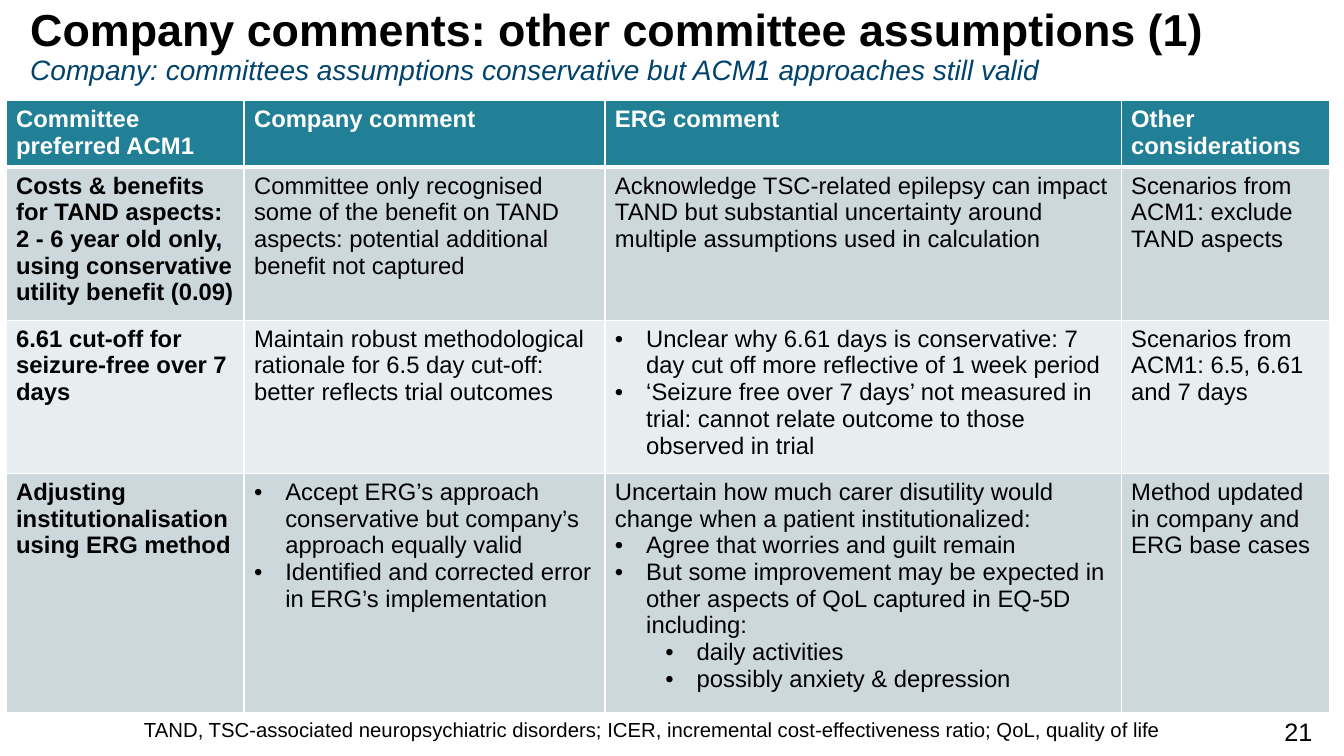
from dataclasses import dataclass

from lxml import etree
from pptx import Presentation
from pptx.dml.color import RGBColor
from pptx.enum.text import MSO_ANCHOR, MSO_AUTO_SIZE, PP_ALIGN
from pptx.oxml.ns import qn
from pptx.util import Inches, Pt

TOP, NO_FIT, LEFT = MSO_ANCHOR.TOP, MSO_AUTO_SIZE.NONE, PP_ALIGN.LEFT
TITLE_ONLY = 5


@dataclass(frozen=True)
class Theme:
    font: str = "Arial"
    black: str = "000000"
    white: str = "FFFFFF"
    subtitle: str = "00436C"
    header: str = "228096"
    bands: tuple[str, str] = ("CDD8DD", "E8EDEF")
    title_size: float = 32
    subtitle_size: float = 20
    table_size: float = 17
    footnote_size: float = 14.5
    number_size: float = 18


@dataclass(frozen=True)
class Line:
    text: str
    bullet: int = 0  # 0 is plain text, 1 and 2 are bullet levels


@dataclass(frozen=True)
class Assumption:
    preferred: str
    company: tuple[Line, ...]
    erg: tuple[Line, ...]
    other: str
    height: float


THEME = Theme()
HEADINGS = ("Committee preferred ACM1", "Company comment", "ERG comment", "Other considerations")
HEADER_HEIGHT = 0.66
COLUMN_WIDTHS = (2.36, 3.58, 5.12, 2.07)
HANGING, LEVEL_STEP = 0.31, 0.5

ASSUMPTIONS = (
    Assumption(
        "Costs & benefits for TAND aspects: 2 - 6 year old only, using conservative utility benefit (0.09)",
        (Line("Committee only recognised some of the benefit on TAND aspects: "
              "potential additional benefit not captured"),),
        (Line("Acknowledge TSC-related epilepsy can impact TAND but substantial uncertainty "
              "around multiple assumptions used in calculation"),),
        "Scenarios from ACM1: exclude TAND aspects",
        1.52,
    ),
    Assumption(
        "6.61 cut-off for seizure-free over 7 days",
        (Line("Maintain robust methodological rationale for 6.5 day cut-off: better reflects trial outcomes"),),
        (Line("Unclear why 6.61 days is conservative: 7 day cut off more reflective of 1 week period", 1),
         Line("‘Seizure free over 7 days’ not measured in trial: cannot relate outcome "
              "to those observed in trial", 1)),
        "Scenarios from ACM1: 6.5, 6.61 and 7 days",
        1.52,
    ),
    Assumption(
        "Adjusting institutionalisation using ERG method",
        (Line("Accept ERG’s approach conservative but company’s approach equally valid", 1),
         Line("Identified and corrected error in ERG’s implementation", 1)),
        (Line("Uncertain how much carer disutility would change when a patient institutionalized:"),
         Line("Agree that worries and guilt remain", 1),
         Line("But some improvement may be expected in other aspects of QoL captured in EQ-5D including:", 1),
         Line("daily activities", 2),
         Line("possibly anxiety & depression", 2)),
        "Method updated in company and ERG base cases",
        2.37,
    ),
)


def write(paragraph, text: str, *, size: float, color: str = THEME.black,
          bold: bool = False, italic: bool = False, spacing: float | None = None) -> None:
    """Add formatted, left-aligned text to a paragraph."""
    paragraph.alignment = LEFT
    if spacing:
        paragraph.line_spacing = spacing
    run = paragraph.add_run()
    run.text = text
    font = run.font
    font.name, font.size, font.bold, font.italic = THEME.font, Pt(size), bold, italic
    font.color.rgb = RGBColor.from_string(color)


def add_bullet(paragraph, level: int) -> None:
    paragraph.level = level - 1
    properties = paragraph._p.get_or_add_pPr()
    properties.set("marL", str(Inches(HANGING + LEVEL_STEP * (level - 1))))
    properties.set("indent", str(-Inches(HANGING)))
    etree.SubElement(properties, qn("a:buFont")).set("typeface", THEME.font)
    etree.SubElement(properties, qn("a:buChar")).set("char", "•")


def add_borders(cell, bottom: float) -> None:
    properties = cell._tc.get_or_add_tcPr()
    for side, width in (("L", 1), ("R", 1), ("T", 1), ("B", bottom)):
        border = etree.SubElement(properties, qn(f"a:ln{side}"), w=str(Pt(width)))
        fill = etree.SubElement(border, qn("a:solidFill"))
        etree.SubElement(fill, qn("a:srgbClr"), val=THEME.white)


def fill_cell(cell, lines: tuple[Line, ...], fill: str, *, color: str = THEME.black,
              bold: bool = False, bottom: float = 1) -> None:
    add_borders(cell, bottom)
    cell.fill.solid()
    cell.fill.fore_color.rgb = RGBColor.from_string(fill)
    frame = cell.text_frame
    for index, line in enumerate(lines):
        paragraph = frame.add_paragraph() if index else frame.paragraphs[0]
        if line.bullet:
            add_bullet(paragraph, line.bullet)
        write(paragraph, line.text, size=THEME.table_size, color=color, bold=bold)


def add_title(slide) -> None:
    title = slide.shapes.title
    title.left, title.top, title.width, title.height = map(Inches, (0.2, 0.03, 13.13, 1.18))
    frame = title.text_frame
    frame.vertical_anchor, frame.auto_size, frame.word_wrap = TOP, NO_FIT, True
    write(frame.paragraphs[0], "Company comments: other committee assumptions (1)",
          size=THEME.title_size, bold=True, spacing=0.9)
    write(frame.add_paragraph(),
          "Company: committees assumptions conservative but ACM1 approaches still valid",
          size=THEME.subtitle_size, color=THEME.subtitle, italic=True, spacing=0.9)


def add_assumptions_table(slide) -> None:
    heights = (HEADER_HEIGHT, *(assumption.height for assumption in ASSUMPTIONS))
    table = slide.shapes.add_table(
        len(heights), len(COLUMN_WIDTHS), Inches(0.06), Inches(1),
        Inches(sum(COLUMN_WIDTHS)), Inches(sum(heights))).table
    for column, width in zip(table.columns, COLUMN_WIDTHS):
        column.width = Inches(width)
    for row, height in zip(table.rows, heights):
        row.height = Inches(height)

    for column, heading in enumerate(HEADINGS):
        fill_cell(table.cell(0, column), (Line(heading),), THEME.header,
                  color=THEME.white, bold=True, bottom=3)
    for row, assumption in enumerate(ASSUMPTIONS, start=1):
        band = THEME.bands[(row - 1) % 2]
        contents = ((Line(assumption.preferred),), assumption.company,
                    assumption.erg, (Line(assumption.other),))
        for column, lines in enumerate(contents):
            fill_cell(table.cell(row, column), lines, band, bold=column == 0)


def add_text(slide, text: str, left: float, top: float, width: float, height: float,
             size: float) -> None:
    frame = slide.shapes.add_textbox(*map(Inches, (left, top, width, height))).text_frame
    frame.word_wrap = True
    write(frame.paragraphs[0], text, size=size)


def main() -> None:
    presentation = Presentation()
    presentation.slide_width, presentation.slide_height = Inches(13.33), Inches(7.5)
    slide = presentation.slides.add_slide(presentation.slide_layouts[TITLE_ONLY])

    # Title and comments table
    add_title(slide)
    add_assumptions_table(slide)

    # Abbreviations and page number
    add_text(slide, "TAND, TSC-associated neuropsychiatric disorders; ICER, incremental "
             "cost-effectiveness ratio; QoL, quality of life",
             1.33, 7.07, 10.87, 0.35, THEME.footnote_size)
    add_text(slide, "21", 12.64, 7.06, 0.55, 0.36, THEME.number_size)

    presentation.save("out.pptx")


if __name__ == "__main__":
    main()
